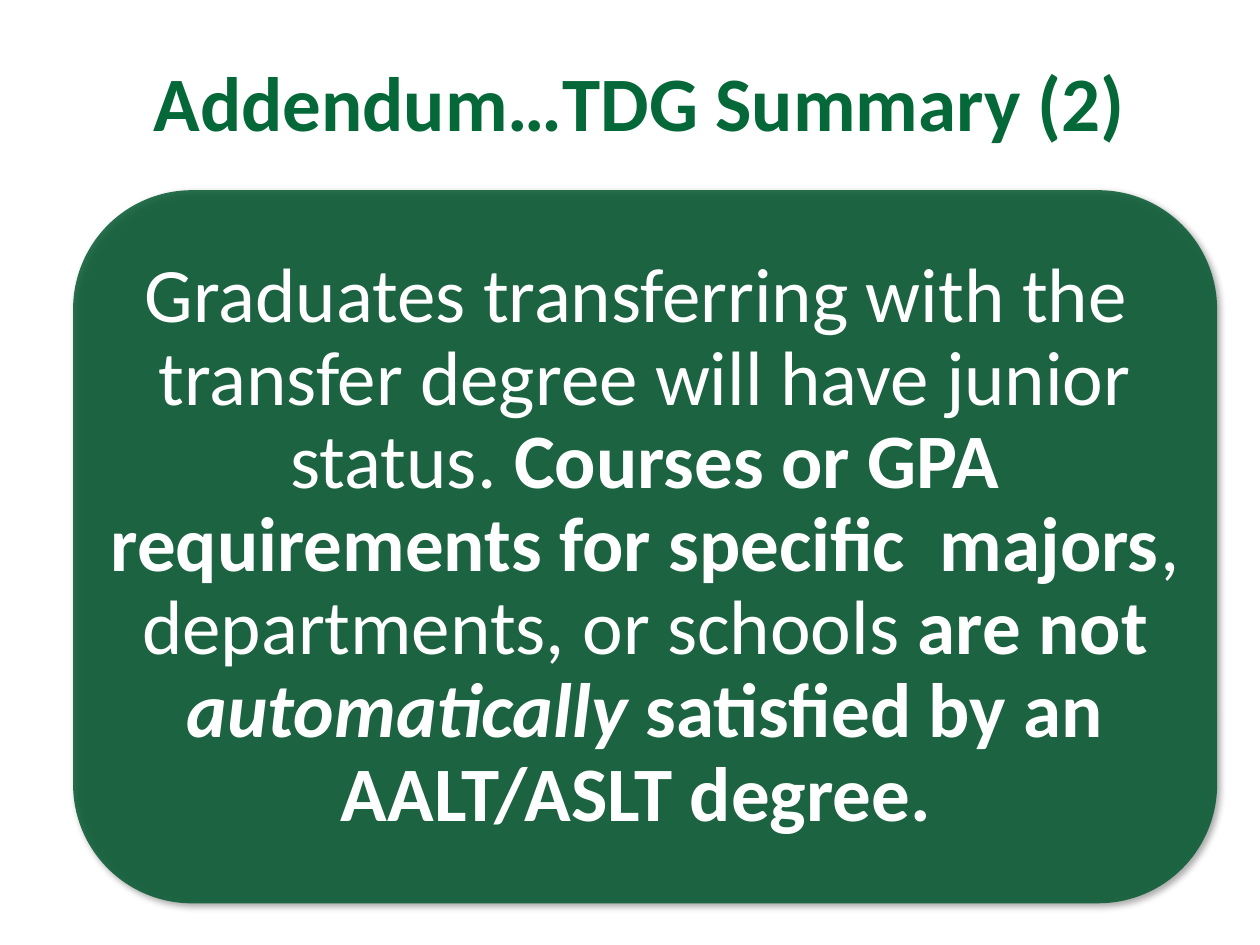
from lxml.etree import SubElement
from pptx import Presentation
from pptx.dml.color import RGBColor
from pptx.enum.shapes import MSO_SHAPE
from pptx.enum.text import MSO_ANCHOR, PP_ALIGN
from pptx.oxml.ns import qn
from pptx.util import Inches, Pt

TITLE_GREEN = RGBColor(0x05, 0x68, 0x39)
PANEL_GREEN = RGBColor(0x04, 0x58, 0x30)
WHITE = RGBColor(0xFF, 0xFF, 0xFF)

# Each run: text, bold, italic
TITLE = [("Addendum…TDG Summary (2)", True, False)]
STATEMENT = [
    ("Graduates transferring with the  transfer degree will have junior status. ", False, False),
    ("Courses or GPA requirements for specific  majors", True, False),
    (", departments, or schools ", False, False),
    ("are not ", True, False),
    ("automatically", True, True),
    (" satisfied by an AALT/ASLT degree. ", True, False),
]

WIDTH, HEIGHT = 10, 7.5
LEFT = 0.58
TITLE_BOX = (LEFT, 0.17, 9, 1.25)
PANEL_BOX = (LEFT, 1.51, 9.08, 5.66)


def add_text(slide, box, runs, color, size=44, inset=0.1, line_spacing=1.0):
    frame = slide.shapes.add_textbox(*map(Inches, box)).text_frame
    frame.word_wrap = True
    frame.vertical_anchor = MSO_ANCHOR.MIDDLE
    frame.margin_left = frame.margin_right = Inches(inset)
    frame.margin_top = frame.margin_bottom = Inches(inset)
    paragraph = frame.paragraphs[0]
    paragraph.alignment = PP_ALIGN.CENTER
    paragraph.line_spacing = line_spacing
    for text, bold, italic in runs:
        run = paragraph.add_run()
        run.text = text
        font = run.font
        font.name, font.size = "Calibri", Pt(size)
        font.bold, font.italic = bold, italic
        font.color.rgb = color


def set_alpha(color_element, percent):
    SubElement(color_element, qn("a:alpha"), val=str(percent * 1000))


def add_panel(slide, box):
    """Add the translucent rounded panel with its soft shadow."""
    panel = slide.shapes.add_shape(MSO_SHAPE.ROUNDED_RECTANGLE, *map(Inches, box))
    panel.fill.solid()
    panel.fill.fore_color.rgb = PANEL_GREEN
    panel.line.fill.background()
    panel.shadow.inherit = False
    properties = panel.element.spPr
    set_alpha(properties.find(qn("a:solidFill")).find(qn("a:srgbClr")), 85)
    shadow = SubElement(properties.find(qn("a:effectLst")), qn("a:outerShdw"),
                        blurRad=str(Pt(4)), dist=str(Pt(3)),
                        dir=str(45 * 60000), algn="tl", rotWithShape="0")
    set_alpha(SubElement(shadow, qn("a:srgbClr"), val="000000"), 40)


def main():
    presentation = Presentation()
    presentation.slide_width, presentation.slide_height = Inches(WIDTH), Inches(HEIGHT)
    slide = presentation.slides.add_slide(presentation.slide_layouts[6])
    add_text(slide, TITLE_BOX, TITLE, TITLE_GREEN)
    add_panel(slide, PANEL_BOX)
    add_text(slide, PANEL_BOX, STATEMENT, WHITE, inset=0.18, line_spacing=0.9)
    presentation.save("out.pptx")


if __name__ == "__main__":
    main()
